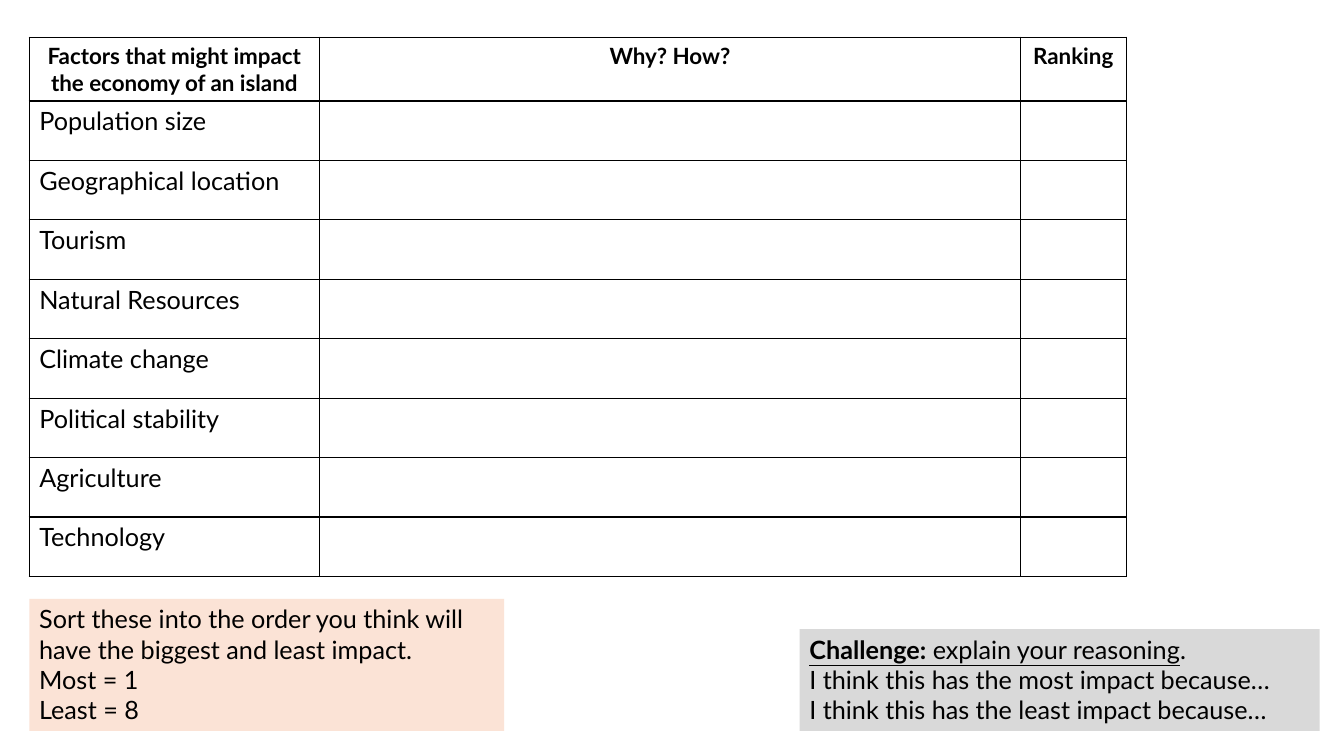
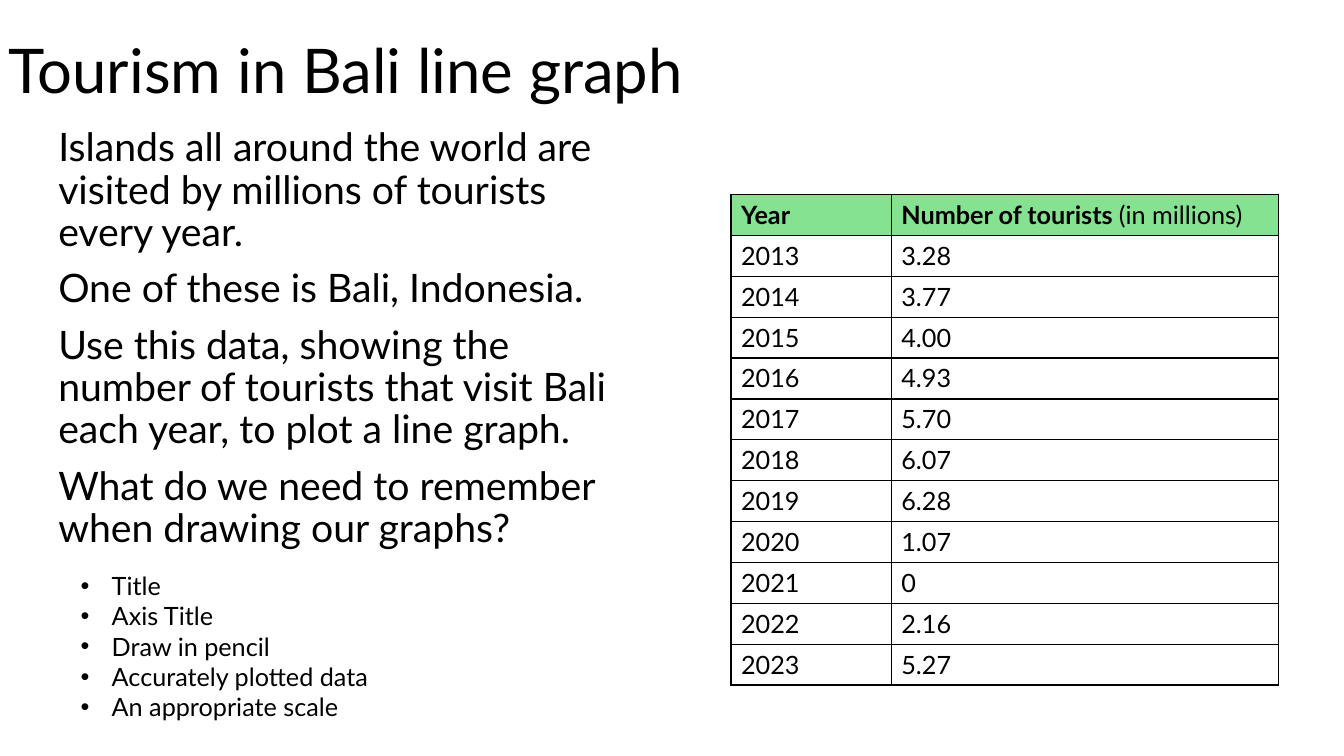
from lxml import etree
from pptx import Presentation
from pptx import util as u
from pptx.dml.color import RGBColor
from pptx.enum import shapes, text
from pptx.oxml.ns import qn

# Shared style
FONT = "Lato"
BLACK = RGBColor(0x00, 0x00, 0x00)
WHITE = RGBColor(0xFF, 0xFF, 0xFF)
PEACH = RGBColor(0xFB, 0xE3, 0xD6)
GREY = RGBColor(0xD9, 0xD9, 0xD9)
GREEN = RGBColor(0x84, 0xE2, 0x91)
TITLE_SIZE, BODY_SIZE, TEXT_SIZE, HEADER_SIZE = 44, 28, 18, 16
BORDER = u.Pt(1)
BULLET_INDENT = u.Inches(0.31)

# Content: a paragraph is a string, or a list of (text, style) runs
FACTOR_HEADERS = ["Factors that might impact the economy of an island", "Why? How?", "Ranking"]
FACTORS = [
    "Population size", "Geographical location", "Tourism", "Natural Resources",
    "Climate change", "Political stability", "Agriculture", "Technology",
]
SORTING_TASK = [
    "Sort these into the order you think will have the biggest and least impact.",
    "Most = 1",
    "Least = 8",
]
CHALLENGE = [
    [("Challenge:", {"bold": True, "underline": True}),
     (" explain your reasoning", {"underline": True}),
     (".", {})],
    "I think this has the most impact because…",
    "I think this has the least impact because…",
]
GRAPH_TITLE = "Tourism in Bali line graph"
GRAPH_TASK = [
    "Islands all around the world are visited by millions of tourists every year.",
    "One of these is Bali, Indonesia.",
    "Use this data, showing the number of tourists that visit Bali each year, to plot a line graph.",
    "What do we need to remember when drawing our graphs?",
]
REMINDERS = ["Title", "Axis Title", "Draw in pencil", "Accurately plotted data", "An appropriate scale"]
TOURIST_HEADERS = [
    [("Year", {"bold": True})],
    [("Number of tourists ", {"bold": True}), ("(in millions)", {})],
]
FIRST_YEAR = 2013
TOURISTS = ["3.28", "3.77", "4.00", "4.93", "5.70", "6.07", "6.28", "1.07", "0", "2.16", "5.27"]


def write(frame, paragraphs, size=TEXT_SIZE, align=None, line=None, before=None):
    """Fill a text frame and give every run the shared font."""
    for index, content in enumerate(paragraphs):
        paragraph = frame.add_paragraph() if index else frame.paragraphs[0]
        paragraph.alignment = align
        paragraph.line_spacing = line
        paragraph.space_before = before
        runs = [(content, {})] if isinstance(content, str) else content
        for words, style in runs:
            run = paragraph.add_run()
            run.text = words
            font = run.font
            font.name, font.size = FONT, u.Pt(size)
            font.color.rgb = BLACK
            font.bold = style.get("bold", False)
            font.underline = style.get("underline", False)


def add_text(slide, box, paragraphs, wrap=True, anchor=text.MSO_ANCHOR.TOP, **style):
    shape = slide.shapes.add_textbox(*map(u.Inches, box))
    frame = shape.text_frame
    frame.word_wrap = wrap
    frame.vertical_anchor = anchor
    write(frame, paragraphs, **style)
    return shape


def add_panel(slide, box, fill, paragraphs):
    shape = slide.shapes.add_shape(shapes.MSO_SHAPE.RECTANGLE, *map(u.Inches, box))
    shape.shadow.inherit = False
    shape.fill.solid()
    shape.fill.fore_color.rgb = fill
    shape.line.fill.background()
    frame = shape.text_frame
    frame.word_wrap = True
    frame.vertical_anchor = text.MSO_ANCHOR.TOP
    write(frame, paragraphs, align=text.PP_ALIGN.LEFT)


def add_bullets(shape):
    for paragraph in shape.text_frame.paragraphs:
        properties = paragraph._p.get_or_add_pPr()
        properties.set("marL", str(BULLET_INDENT))
        properties.set("indent", str(-BULLET_INDENT))
        etree.SubElement(properties, qn("a:buFont")).set("typeface", "Arial")
        etree.SubElement(properties, qn("a:buChar")).set("char", "•")


def add_borders(cell):
    properties = cell._tc.get_or_add_tcPr()
    for side in ("a:lnL", "a:lnR", "a:lnT", "a:lnB"):
        line = etree.SubElement(properties, qn(side), w=str(BORDER))
        fill = etree.SubElement(line, qn("a:solidFill"))
        etree.SubElement(fill, qn("a:srgbClr"), val=str(BLACK))


def add_grid(slide, left, top, widths, heights, rows, header_fill=WHITE, header_style=None):
    """Draw a bordered table whose first row is the header."""
    frame = slide.shapes.add_table(
        len(rows), len(widths), u.Inches(left), u.Inches(top),
        u.Inches(sum(widths)), u.Inches(sum(heights)))
    table = frame.table
    table.first_row = table.horz_banding = False
    for column, width in zip(table.columns, widths):
        column.width = u.Inches(width)
    for row, height in zip(table.rows, heights):
        row.height = u.Inches(height)
    for row_index, row in enumerate(rows):
        style = {} if row_index else header_style or {}
        for column_index, content in enumerate(row):
            cell = table.cell(row_index, column_index)
            add_borders(cell)
            cell.fill.solid()
            cell.fill.fore_color.rgb = WHITE if row_index else header_fill
            if content:
                write(cell.text_frame, [content], **style)


def build_factors(slide):
    # Ranking table
    headers = [[(label, {"bold": True})] for label in FACTOR_HEADERS]
    rows = [headers] + [[factor, "", ""] for factor in FACTORS]
    add_grid(slide, 0.29, 0.37, [2.88, 6.95, 1.05], [0.63] + [0.59] * len(FACTORS), rows,
             header_style={"size": HEADER_SIZE, "align": text.PP_ALIGN.CENTER})
    # Instructions
    add_panel(slide, (0.29, 5.94, 4.71, 1.31), PEACH, SORTING_TASK)
    add_panel(slide, (7.93, 6.24, 5.16, 1.01), GREY, CHALLENGE)


def build_graph_task(slide):
    # Title and task
    add_text(slide, (-0.01, 0, 11.5, 1.45), [GRAPH_TITLE], size=TITLE_SIZE, line=0.9,
             anchor=text.MSO_ANCHOR.MIDDLE)
    add_text(slide, (0.48, 1.22, 5.8, 5.06), GRAPH_TASK, size=BODY_SIZE, line=0.9, before=u.Pt(10))
    # Tourist numbers by year
    rows = [TOURIST_HEADERS] + [
        [str(year), number] for year, number in enumerate(TOURISTS, FIRST_YEAR)]
    add_grid(slide, 7.25, 1.93, [1.59, 3.84], [4.87 / len(rows)] * len(rows), rows, header_fill=GREEN)
    # Reminders
    add_bullets(add_text(slide, (0.7, 5.61, 3.05, 1.62), REMINDERS, wrap=False))


def main():
    presentation = Presentation()
    presentation.slide_width = u.Inches(13.33)
    presentation.slide_height = u.Inches(7.5)
    blank = presentation.slide_layouts[6]
    for build in (build_factors, build_graph_task):
        build(presentation.slides.add_slide(blank))
    presentation.save("out.pptx")


if __name__ == "__main__":
    main()
